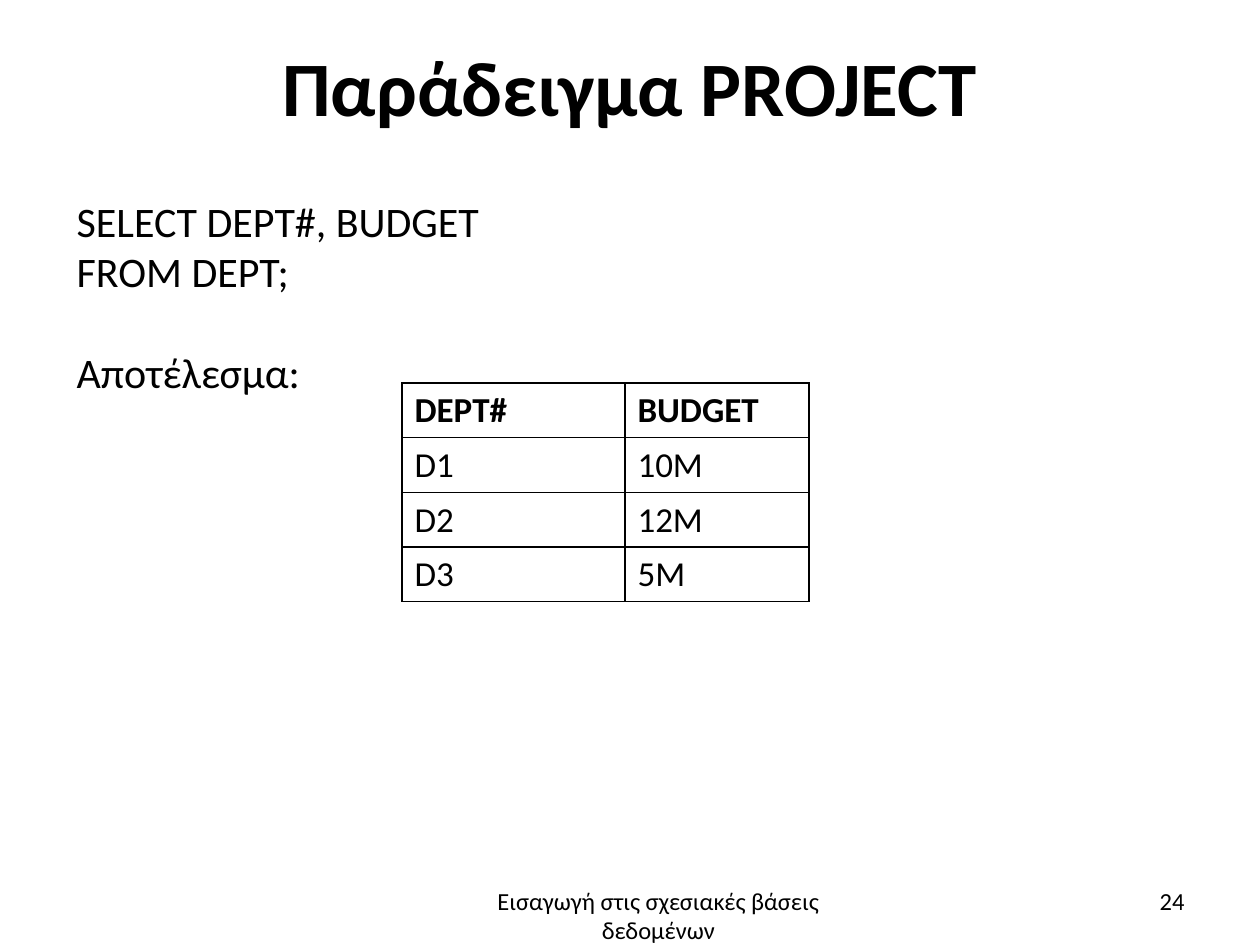
"""Build the PROJECT example slide with its query, result table and footer."""
from lxml.etree import SubElement
from pptx import Presentation
from pptx.dml.color import RGBColor
from pptx.enum.text import MSO_ANCHOR, PP_ALIGN
from pptx.oxml.ns import qn
from pptx.util import Inches, Pt


def color(value):
    return RGBColor.from_string(value)


def write(p, text, size, bold, align):
    p.alignment = align
    r = p.add_run()
    r.text = text
    font = {"name": "Calibri", "size": Pt(size), "bold": bold}
    for key, value in font.items():
        setattr(r.font, key, value)
    r.font.color.rgb = color("000000")


prs = Presentation()
prs.slide_width, prs.slide_height = Inches(10), Inches(7.5)
s = prs.slides.add_slide(prs.slide_layouts[6])

title = ["Παράδειγμα PROJECT"]
query = ["SELECT DEPT#, BUDGET", "FROM DEPT;", "Αποτέλεσμα:"]
footer = ["Εισαγωγή στις σχεσιακές βάσεις δεδομένων"]
number = ["24"]
middle, top = MSO_ANCHOR.MIDDLE, MSO_ANCHOR.TOP
boxes = [
    ((0.5, 0.13, 9, 1.1), title, 44, True, PP_ALIGN.CENTER, middle),
    ((0.51, 1.5, 8.98, 1.72), query, 24, False, PP_ALIGN.LEFT, top),
    ((3.48, 6.98, 3.49, 0.52), footer, 14, False, PP_ALIGN.CENTER, top),
    ((7.17, 6.95, 2.33, 0.4), number, 14, False, PP_ALIGN.RIGHT, middle),
]
for place, lines, size, bold, align, anchor in boxes:
    tf = s.shapes.add_textbox(*map(Inches, place)).text_frame
    for key, value in {"word_wrap": True, "vertical_anchor": anchor}.items():
        setattr(tf, key, value)
    for i, line in enumerate(lines):
        p = tf.add_paragraph() if i else tf.paragraphs[0]
        write(p, line, size, bold, align)
        if line == "Αποτέλεσμα:":
            p.space_before = Pt(29)

rows = [("DEPT#", "BUDGET"), ("D1", "10M"), ("D2", "12M"), ("D3", "5M")]
place = (3.19, 3.04, 3.23, 1.73)
table = s.shapes.add_table(len(rows), 2, *map(Inches, place)).table
for column, width in zip(table.columns, (1.77, 1.46)):
    column.width = Inches(width)
for i, row in enumerate(rows):
    table.rows[i].height = Inches(0.43)
    for j, text in enumerate(row):
        cell = table.cell(i, j)
        write(cell.text_frame.paragraphs[0], text, 20, i == 0, PP_ALIGN.JUSTIFY)
        tcPr = cell._tc.get_or_add_tcPr()
        for side in ("lnL", "lnR", "lnT", "lnB"):
            ln = SubElement(tcPr, qn(f"a:{side}"), w=str(Pt(1)))
            fill = SubElement(ln, qn("a:solidFill"))
            SubElement(fill, qn("a:srgbClr"), val="000000")
        cell.fill.background()

prs.save("out.pptx")
